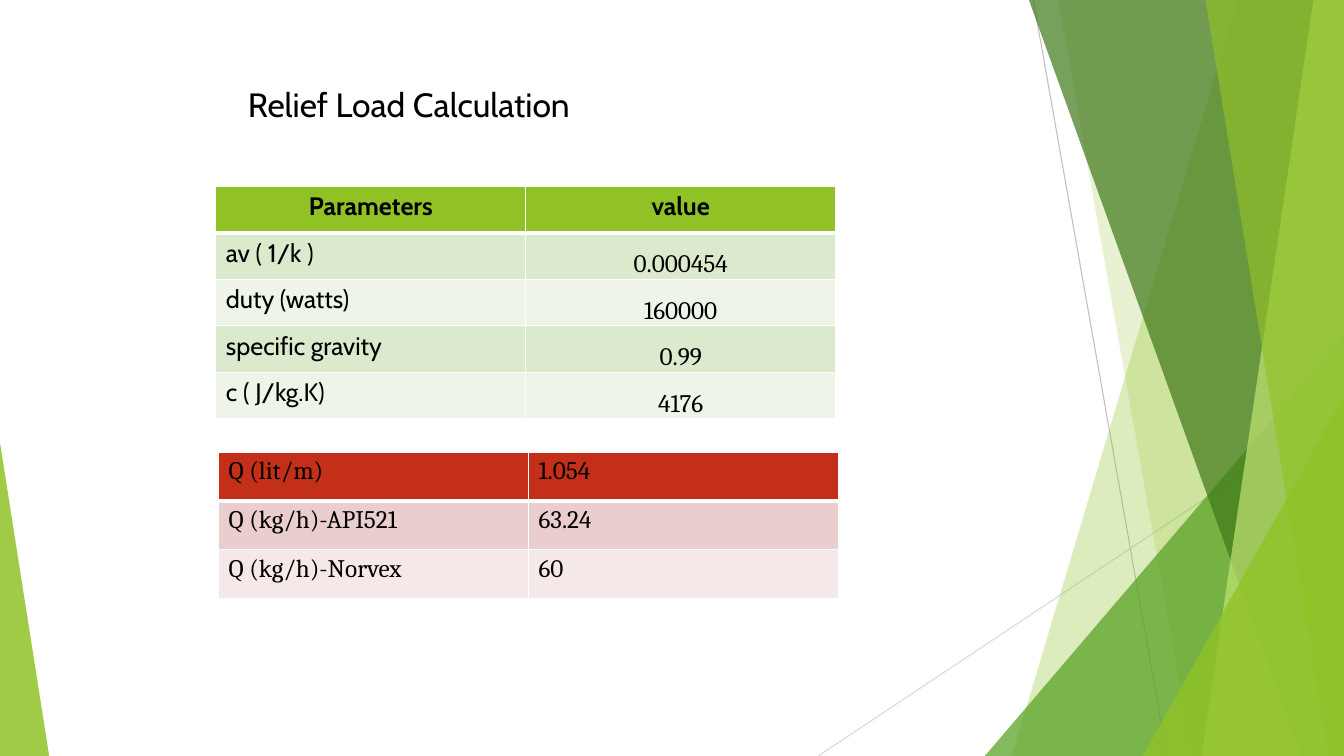
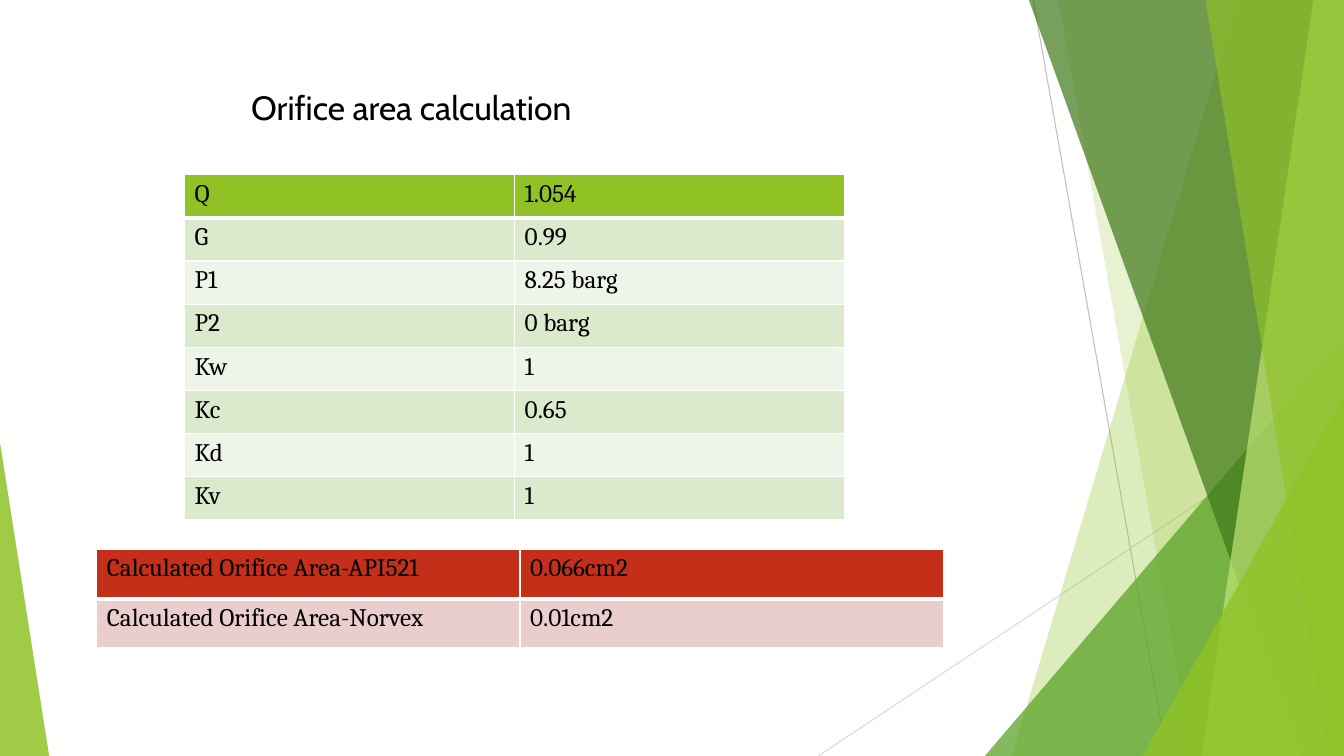
"""Build two slides on relief load and orifice area."""
from lxml.etree import SubElement as Sub
from pptx import Presentation
from pptx.dml.color import RGBColor as Rgb
from pptx.enum.shapes import MSO_CONNECTOR as Link, MSO_SHAPE as Form
from pptx.enum.text import MSO_ANCHOR as Anchor, PP_ALIGN as Align
from pptx.oxml.ns import qn
from pptx.util import Cm, Pt

COLORS = {
    "lime": "90C226", "leaf": "54A021", "moss": "3F7819", "pale": "C0E474",
    "gray": "BFBFBF", "mist": "D9D9D9", "white": "FFFFFF", "black": "000000",
    "mint": "DBE9CD", "frost": "EEF4E8",
    "red": "C42F1A", "rose": "EACDCD", "blush": "F5E8E8",
}
GREEN = ("lime", "mint", "frost")
RED = ("red", "rose", "blush")
WIDE, HIGH = 33.87, 19.05

LINES = [
    (26.04, 0, 29.41, HIGH, "gray"),
    (WIDE, 10.24, 20.62, HIGH, "mist"),
]
DECOR = [
    ("band", (31.19, 25.5), "lime", 30),
    ("band", (26.67, 30.05), "lime", 20),
    ("peak", (24.82, 8.46, WIDE, 1), "leaf", 72),
    ("band", (25.93, 32.79), "moss", 70),
    ("band", (33.1, 30.28), "pale", 70),
    ("band", (30.38, 33.48), "lime", 65),
    ("peak", (28.8, 9.98, WIDE, 1), "lime", 80),
    ("peak", (0, 11.15, 1.24, 0), "lime", 85),
]
SLIDES = [
    {
        "title": ("Relief Load Calculation", 6.25, 2.02),
        "tables": [
            {"box": (5.44, 4.7, 15.62, 5.85), "tones": GREEN, "form": True,
             "rows": [("Parameters", "value"), ("av ( 1/k )", "0.000454"),
                      ("duty (watts)", "160000"), ("specific gravity", "0.99"),
                      ("c ( J/kg.K)", "4176")]},
            {"box": (5.51, 11.39, 15.62, 3.69), "tones": RED, "form": False,
             "rows": [("Q (lit/m)", "1.054"), ("Q (kg/h)-API521", "63.24"),
                      ("Q (kg/h)-Norvex", "60")]},
        ],
    },
    {
        "title": ("Orifice area calculation", 6.33, 2.11),
        "tables": [
            {"box": (4.65, 4.4, 16.64, 8.71), "tones": GREEN, "form": False,
             "rows": [("Q", "1.054"), ("G", "0.99"), ("P1", "8.25 barg"),
                      ("P2", "0 barg"), ("Kw", "1"), ("Kc", "0.65"),
                      ("Kd", "1"), ("Kv", "1")]},
            {"box": (2.44, 13.84, 21.33, 2.49), "tones": RED, "form": False,
             "rows": [("Calculated Orifice Area-API521", "0.066cm2"),
                      ("Calculated Orifice Area-Norvex", "0.01cm2")]},
        ],
    },
]


def style(para, size, face, bold=False):
    for run in para.runs:
        font = run.font
        font.size, font.name, font.bold = Pt(size), face, bold
        font.color.rgb = Rgb.from_string(COLORS["black"])


def edge(cell, side, width):
    line = Sub(cell._tc.get_or_add_tcPr(), qn("a:ln" + side), w=str(Pt(width)))
    fill = Sub(line, qn("a:solidFill"))
    Sub(fill, qn("a:srgbClr"), val=COLORS["white"])


deck = Presentation()
deck.slide_width, deck.slide_height = Cm(WIDE), Cm(HIGH)

for page in SLIDES:
    slide = deck.slides.add_slide(deck.slide_layouts[6])
    shapes = slide.shapes

    for *ends, tone in LINES:
        line = shapes.add_connector(Link.STRAIGHT, *map(Cm, ends))
        line.line.color.rgb = Rgb.from_string(COLORS[tone])
        line.line.width = Pt(0.75)
        Sub(line._element.spPr, qn("a:effectLst"))

    for kind, place, tone, alpha in DECOR:
        if kind == "band":
            top, base = place
            path = shapes.build_freeform(Cm(top), 0)
            path.add_line_segments([(Cm(WIDE), 0), (Cm(WIDE), Cm(HIGH)),
                                    (Cm(base), Cm(HIGH))])
            shape = path.convert_to_shape()
        else:
            left, top, right, tip = place
            shape = shapes.add_shape(Form.ISOSCELES_TRIANGLE, Cm(left), Cm(top),
                                     Cm(right - left), Cm(HIGH - top))
            shape.adjustments[0] = tip
        shape.shadow.inherit = False
        shape.line.fill.background()
        shape.fill.solid()
        shape.fill.fore_color.rgb = Rgb.from_string(COLORS[tone])
        color = next(shape._element.spPr.iter(qn("a:srgbClr")))
        Sub(color, qn("a:alpha"), val=str(alpha * 1000))

    text, left, top = page["title"]
    frame = shapes.add_textbox(Cm(left), Cm(top), Cm(14), Cm(1.2)).text_frame
    frame.word_wrap = True
    frame.vertical_anchor = Anchor.MIDDLE
    frame.margin_left = frame.margin_right = 0
    frame.margin_top = frame.margin_bottom = 0
    frame.text = text
    style(frame.paragraphs[0], 24, "Cabin")

    for spec in page["tables"]:
        rows, tones, form = spec["rows"], spec["tones"], spec["form"]
        table = shapes.add_table(len(rows), 2, *map(Cm, spec["box"])).table
        for r, row in enumerate(rows):
            tone = tones[0] if r == 0 else tones[2 - r % 2]
            for c, text in enumerate(row):
                cell = table.cell(r, c)
                head = form and r == 0
                value = form and r > 0 and c == 1
                cell.text_frame.text = text
                para = cell.text_frame.paragraphs[0]
                face = "Cabin" if form and not value else "Cambria"
                style(para, 18, face, head)
                if head or value:
                    para.alignment = Align.CENTER
                if value:
                    cell.vertical_anchor = Anchor.BOTTOM
                    cell.margin_left = cell.margin_right = Cm(0.03)
                    cell.margin_top, cell.margin_bottom = Cm(0.03), 0
                for side in "LRTB":
                    thick = (r, side) in ((0, "B"), (1, "T"))
                    edge(cell, side, 3 if thick else 1)
                cell.fill.solid()
                cell.fill.fore_color.rgb = Rgb.from_string(COLORS[tone])

deck.save("out.pptx")
